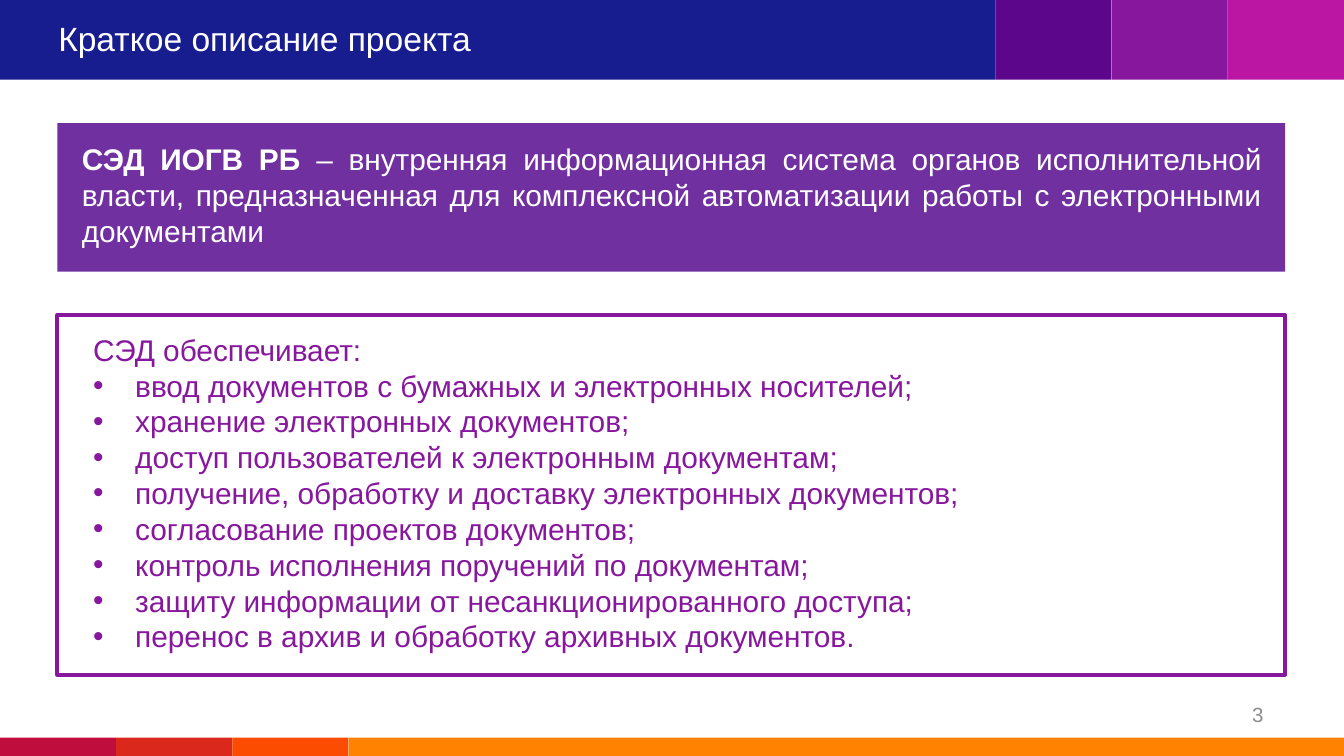
from dataclasses import dataclass

from lxml import etree
from pptx import Presentation
from pptx.dml.color import RGBColor
from pptx.enum.shapes import MSO_SHAPE
from pptx.enum.text import MSO_ANCHOR, MSO_AUTO_SIZE, PP_ALIGN
from pptx.oxml.ns import qn
from pptx.util import Emu, Pt

RECTANGLE = MSO_SHAPE.RECTANGLE
TOP, MIDDLE = MSO_ANCHOR.TOP, MSO_ANCHOR.MIDDLE
LEFT, RIGHT, JUSTIFY = PP_ALIGN.LEFT, PP_ALIGN.RIGHT, PP_ALIGN.JUSTIFY
NO_AUTOFIT = MSO_AUTO_SIZE.NONE

WHITE = RGBColor(0xFF, 0xFF, 0xFF)
NAVY = RGBColor(0x17, 0x1C, 0x8F)
INDIGO = RGBColor(0x5C, 0x06, 0x8C)
PURPLE = RGBColor(0x87, 0x18, 0x9D)
MAGENTA = RGBColor(0xBB, 0x16, 0xA3)
VIOLET = RGBColor(0x70, 0x30, 0xA0)
CRIMSON = RGBColor(0xBF, 0x0D, 0x3E)
RED = RGBColor(0xDA, 0x29, 0x1C)
VERMILION = RGBColor(0xFC, 0x4C, 0x02)
ORANGE = RGBColor(0xFF, 0x82, 0x00)
GRAY = RGBColor(0x8C, 0x8C, 0x8C)

EMU_PER_PX = 9525
SLIDE_WIDTH, SLIDE_HEIGHT = 960, 540
TILE_WIDTH = 83
LONG_WIDTH = SLIDE_WIDTH - 3 * TILE_WIDTH
BULLET_INDENT = 30
FONT_NAME = "Arial"

FUNCTIONS = [
    "ввод документов с бумажных и электронных носителей;",
    "хранение электронных документов;",
    "доступ пользователей к электронным документам;",
    "получение, обработку и доставку электронных документов;",
    "согласование проектов документов;",
    "контроль исполнения поручений по документам;",
    "защиту информации от несанкционированного доступа;",
    "перенос в архив и обработку архивных документов.",
]


@dataclass(frozen=True)
class Box:
    left: int
    top: int
    width: int
    height: int


@dataclass(frozen=True)
class Band:
    top: int
    height: int
    tiles: tuple[tuple[int, RGBColor], ...]


BANDS = [
    Band(0, 57, ((LONG_WIDTH, NAVY), (TILE_WIDTH, INDIGO),
                 (TILE_WIDTH, PURPLE), (TILE_WIDTH, MAGENTA))),
    Band(527, 13, ((TILE_WIDTH, CRIMSON), (TILE_WIDTH, RED),
                   (TILE_WIDTH, VERMILION), (LONG_WIDTH, ORANGE))),
]


def px(length: int) -> Emu:
    return Emu(length * EMU_PER_PX)


def place(shape, box: Box) -> None:
    shape.left, shape.top = px(box.left), px(box.top)
    shape.width, shape.height = px(box.width), px(box.height)


def add_rectangle(slide, box: Box, fill: RGBColor, line: RGBColor | None = None) -> None:
    shape = slide.shapes.add_shape(
        RECTANGLE, px(box.left), px(box.top), px(box.width), px(box.height))
    shape.shadow.inherit = False
    shape.fill.solid()
    shape.fill.fore_color.rgb = fill
    if line is None:
        shape.line.fill.background()
    else:
        shape.line.color.rgb = line
        shape.line.width = Pt(2)


def add_band(slide, band: Band) -> None:
    left = 0
    for width, color in band.tiles:
        add_rectangle(slide, Box(left, band.top, width, band.height), color)
        left += width


def prepare_frame(shape, anchor: MSO_ANCHOR):
    frame = shape.text_frame
    frame.word_wrap = True
    frame.auto_size = NO_AUTOFIT
    frame.vertical_anchor = anchor
    return frame


def add_text_box(slide, box: Box, anchor: MSO_ANCHOR):
    shape = slide.shapes.add_textbox(
        px(box.left), px(box.top), px(box.width), px(box.height))
    return prepare_frame(shape, anchor)


def use_placeholder(shape, box: Box, anchor: MSO_ANCHOR):
    place(shape, box)
    element = shape._element
    element.getparent().append(element)
    return prepare_frame(shape, anchor)


def format_paragraph(paragraph, size: int, color: RGBColor, alignment: PP_ALIGN = LEFT) -> None:
    paragraph.alignment = alignment
    paragraph.font.name = FONT_NAME
    paragraph.font.size = Pt(size)
    paragraph.font.color.rgb = color


def set_bullet(paragraph, character: str | None) -> None:
    properties = paragraph._p.get_or_add_pPr()
    indent = px(BULLET_INDENT) if character else 0
    properties.set("marL", str(indent))
    properties.set("indent", str(-indent))
    if character:
        etree.SubElement(properties, qn("a:buFont"), typeface=FONT_NAME)
        etree.SubElement(properties, qn("a:buChar"), char=character)
    else:
        etree.SubElement(properties, qn("a:buNone"))


def add_title(slide) -> None:
    frame = use_placeholder(slide.shapes.title, Box(32, 14, 819, 27), MIDDLE)
    frame.text = "Краткое описание проекта"
    format_paragraph(frame.paragraphs[0], 18, WHITE)


def add_functions(slide) -> None:
    add_rectangle(slide, Box(41, 225, 877, 257), WHITE, PURPLE)
    frame = use_placeholder(slide.placeholders[1], Box(57, 232, 854, 242), TOP)
    frame.text = "\n".join(["СЭД обеспечивает:", *FUNCTIONS])
    for index, paragraph in enumerate(frame.paragraphs):
        set_bullet(paragraph, "•" if index else None)
        paragraph.space_before = Pt(0)
        format_paragraph(paragraph, 16, PURPLE)


def add_definition(slide) -> None:
    add_rectangle(slide, Box(41, 88, 877, 106), VIOLET)
    paragraph = add_text_box(slide, Box(49, 96, 862, 87), TOP).paragraphs[0]
    format_paragraph(paragraph, 16, WHITE, JUSTIFY)
    term = paragraph.add_run()
    term.text = "СЭД ИОГВ РБ "
    term.font.bold = True
    paragraph.add_run().text = (
        "– внутренняя информационная система органов исполнительной власти, "
        "предназначенная для комплексной автоматизации работы с электронными документами")


def add_slide_number(slide) -> None:
    frame = add_text_box(slide, Box(688, 500, 224, 20), MIDDLE)
    frame.text = "3"
    format_paragraph(frame.paragraphs[0], 11, GRAY, RIGHT)


def main() -> None:
    presentation = Presentation()
    presentation.slide_width = px(SLIDE_WIDTH)
    presentation.slide_height = px(SLIDE_HEIGHT)
    slide = presentation.slides.add_slide(presentation.slide_layouts[1])
    for band in BANDS:
        add_band(slide, band)
    add_title(slide)
    add_functions(slide)
    add_definition(slide)
    add_slide_number(slide)
    presentation.save("out.pptx")


if __name__ == "__main__":
    main()
